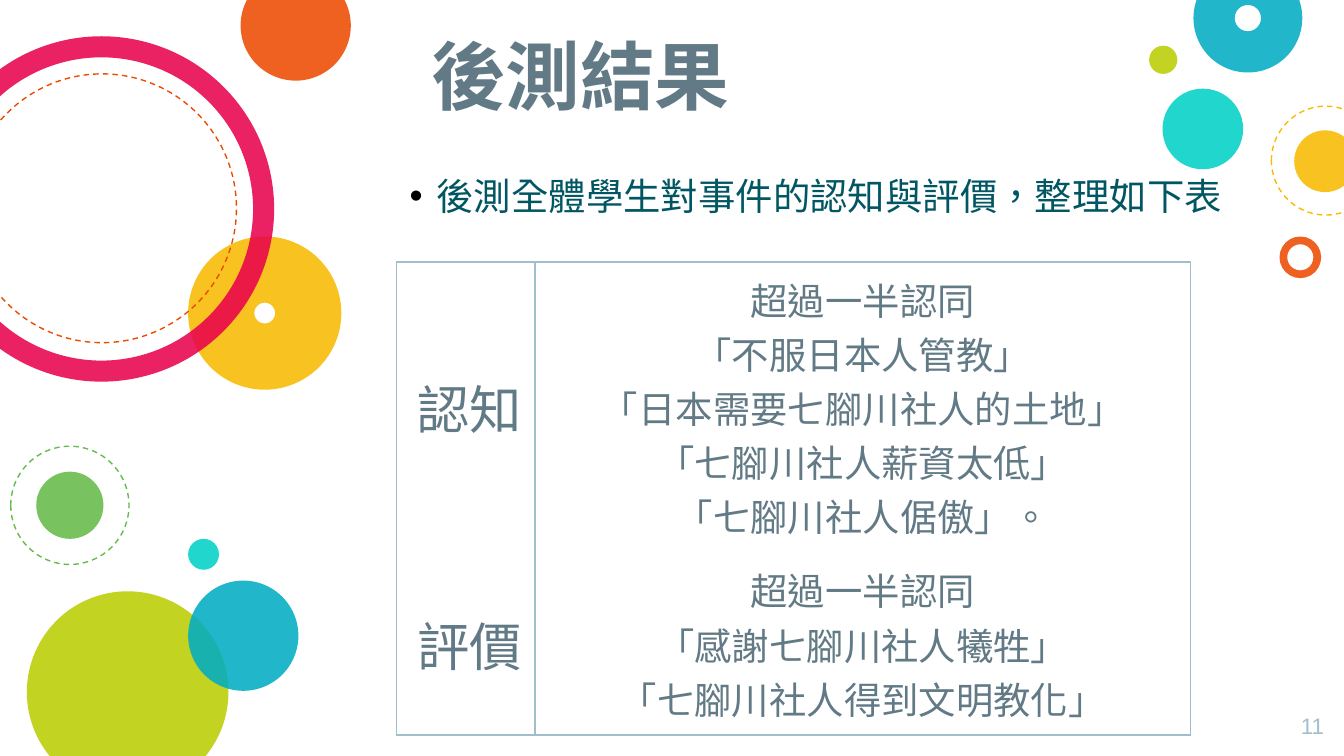
from lxml import etree
from pptx import Presentation
from pptx.dml.color import RGBColor
from pptx.enum.dml import MSO_LINE
from pptx.enum.shapes import MSO_SHAPE
from pptx.enum.text import MSO_ANCHOR, MSO_AUTO_SIZE, PP_ALIGN
from pptx.oxml.ns import qn
from pptx.util import Inches, Pt

CJK_FONT = "Noto Sans CJK SC"
COLORS = {
    "turquoise": "00D1C6", "lime": "BBCD00", "green": "65BB48",
    "yellow": "F8BB00", "orange": "ED4A00", "pink": "E8004C",
    "blue": "00ACC3", "slate": "617A86", "mist": "A1BECC",
    "teal": "005662", "black": "000000",
}
LEFT_CIRCLES = [
    ("disc", 1.4, 4.01, 0.23, "turquoise"),
    ("disc", 0.2, 4.4, 1.5, "lime"),
    ("disc", 0.27, 3.51, 0.5, "green"),
    ("dashed", 0.08, 3.32, 0.88, "green"),
    ("ring", 1.4, 1.76, 1.14, "yellow", 0.432),
    ("disc", 1.79, -0.22, 0.82, "orange"),
    ("ring", -0.53, 0.27, 2.57, "pink", 0.061),
    ("dashed", -0.24, 0.55, 2, "orange"),
    ("disc", 1.4, 4.32, 0.82, "blue"),
]
RIGHT_CIRCLES = [
    ("disc", 8.65, 0.66, 0.6, "turquoise"),
    ("ring", 9.52, 1.76, 0.31, "orange", 0.186),
    ("disc", 9.63, 0.97, 0.46, "yellow"),
    ("ring", 8.88, -0.27, 0.81, "blue", 0.379),
    ("disc", 8.55, 0.34, 0.21, "lime"),
    ("dashed", 9.46, 0.79, 0.81, "yellow"),
]
RESULTS = [
    ("認知", ["超過一半認同", "「不服日本人管教」", "「日本需要七腳川社人的土地」",
            "「七腳川社人薪資太低」", "「七腳川社人倨傲」。"]),
    ("評價", ["超過一半認同", "「感謝七腳川社人犧牲」", "「七腳川社人得到文明教化」"]),
]


def rgb(color):
    return RGBColor.from_string(COLORS[color])


def add_circle(slide, kind, left, top, size, color, thickness=None):
    preset = MSO_SHAPE.DONUT if kind == "ring" else MSO_SHAPE.OVAL
    shape = slide.shapes.add_shape(
        preset, Inches(left), Inches(top), Inches(size), Inches(size))
    shape.shadow.inherit = False
    if thickness is not None:
        shape.adjustments[0] = thickness
    if kind == "dashed":
        shape.fill.background()
        shape.line.color.rgb = rgb(color)
        shape.line.width = Pt(0.75)
        shape.line.dash_style = MSO_LINE.DASH
    else:
        shape.fill.solid()
        shape.fill.fore_color.rgb = rgb(color)
        fill_color = shape.fill._xPr.find(".//" + qn("a:srgbClr"))
        etree.SubElement(fill_color, qn("a:alpha"), val="87000")
        shape.line.fill.background()


def format_text(text_frame, size, color, font=CJK_FONT, bold=False, align=PP_ALIGN.LEFT):
    for paragraph in text_frame.paragraphs:
        paragraph.alignment = align
        for run in paragraph.runs:
            run.font.size = Pt(size)
            run.font.bold = bold
            run.font.color.rgb = rgb(color)
            run.font.name = font
            properties = run._r.get_or_add_rPr()
            properties.set("lang", "zh-TW")
            etree.SubElement(properties, qn("a:ea"), typeface=font)


def add_text(slide, text, left, top, width, height, margin=0.1, **style):
    shape = slide.shapes.add_textbox(
        Inches(left), Inches(top), Inches(width), Inches(height))
    text_frame = shape.text_frame
    text_frame.word_wrap = True
    text_frame.margin_top = text_frame.margin_bottom = Inches(margin)
    text_frame.text = text
    format_text(text_frame, **style)
    return text_frame


def add_bullet(paragraph, color):
    paragraph.space_after = Pt(12)
    properties = paragraph._p.get_or_add_pPr()
    properties.set("marL", str(Inches(0.2)))
    properties.set("indent", str(Inches(-0.2)))
    bullet_color = etree.SubElement(properties, qn("a:buClr"))
    etree.SubElement(bullet_color, qn("a:srgbClr"), val=COLORS[color])
    etree.SubElement(properties, qn("a:buFont"), typeface="Arial")
    etree.SubElement(properties, qn("a:buChar"), char="•")


def set_borders(cell, visible_sides):
    properties = cell._tc.get_or_add_tcPr()
    for index, side in enumerate("LRTB"):
        line = etree.Element(qn("a:ln" + side), w=str(Pt(0.75)))
        if side in visible_sides:
            fill = etree.SubElement(line, qn("a:solidFill"))
            etree.SubElement(fill, qn("a:srgbClr"), val=COLORS["mist"])
        else:
            etree.SubElement(line, qn("a:noFill"))
        properties.insert(index, line)


def fill_cell(cell, text, size, align, visible_sides):
    cell.fill.background()
    cell.vertical_anchor = MSO_ANCHOR.MIDDLE
    cell.margin_left = cell.margin_right = Inches(0.1)
    cell.margin_top = cell.margin_bottom = Inches(0.07)
    cell.text_frame.text = text
    format_text(cell.text_frame, size, "slate", align=align)
    set_borders(cell, visible_sides)


def add_results_table(slide):
    row_heights = (2.16, 1.36)
    table = slide.shapes.add_table(
        len(RESULTS), 2, Inches(2.95), Inches(1.95),
        Inches(5.91), Inches(sum(row_heights))).table
    table.first_row = False
    table.horz_banding = False
    for column, width in zip(table.columns, (1.03, 4.88)):
        column.width = Inches(width)
    for row, height in zip(table.rows, row_heights):
        row.height = Inches(height)
    for row, (label, findings), sides in zip(table.rows, RESULTS, ("LRT", "LRB")):
        fill_cell(row.cells[0], label, 28, PP_ALIGN.RIGHT, sides)
        fill_cell(row.cells[1], "\n".join(findings), 20, PP_ALIGN.CENTER, sides)


def main():
    presentation = Presentation()
    presentation.slide_width = Inches(10)
    presentation.slide_height = Inches(10) * 9 // 16
    slide = presentation.slides.add_slide(presentation.slide_layouts[6])
    for circle in LEFT_CIRCLES + RIGHT_CIRCLES:
        add_circle(slide, *circle)
    title = add_text(slide, "後測結果", 3.11, 0.29, 5.77, 0.7,
                     size=40, color="slate", bold=True)
    title.vertical_anchor = MSO_ANCHOR.BOTTOM
    add_results_table(slide)
    add_text(slide, "11", 9.44, 5.2, 0.51, 0.43,
             size=12, color="mist", font="Arial", align=PP_ALIGN.RIGHT)
    summary = add_text(slide, "後測全體學生對事件的認知與評價，整理如下表",
                       2.95, 1.24, 6.29, 0.44, margin=0.05, size=20, color="teal")
    summary.word_wrap = False
    summary.auto_size = MSO_AUTO_SIZE.SHAPE_TO_FIT_TEXT
    add_bullet(summary.paragraphs[0], "black")
    presentation.save("out.pptx")


if __name__ == "__main__":
    main()
